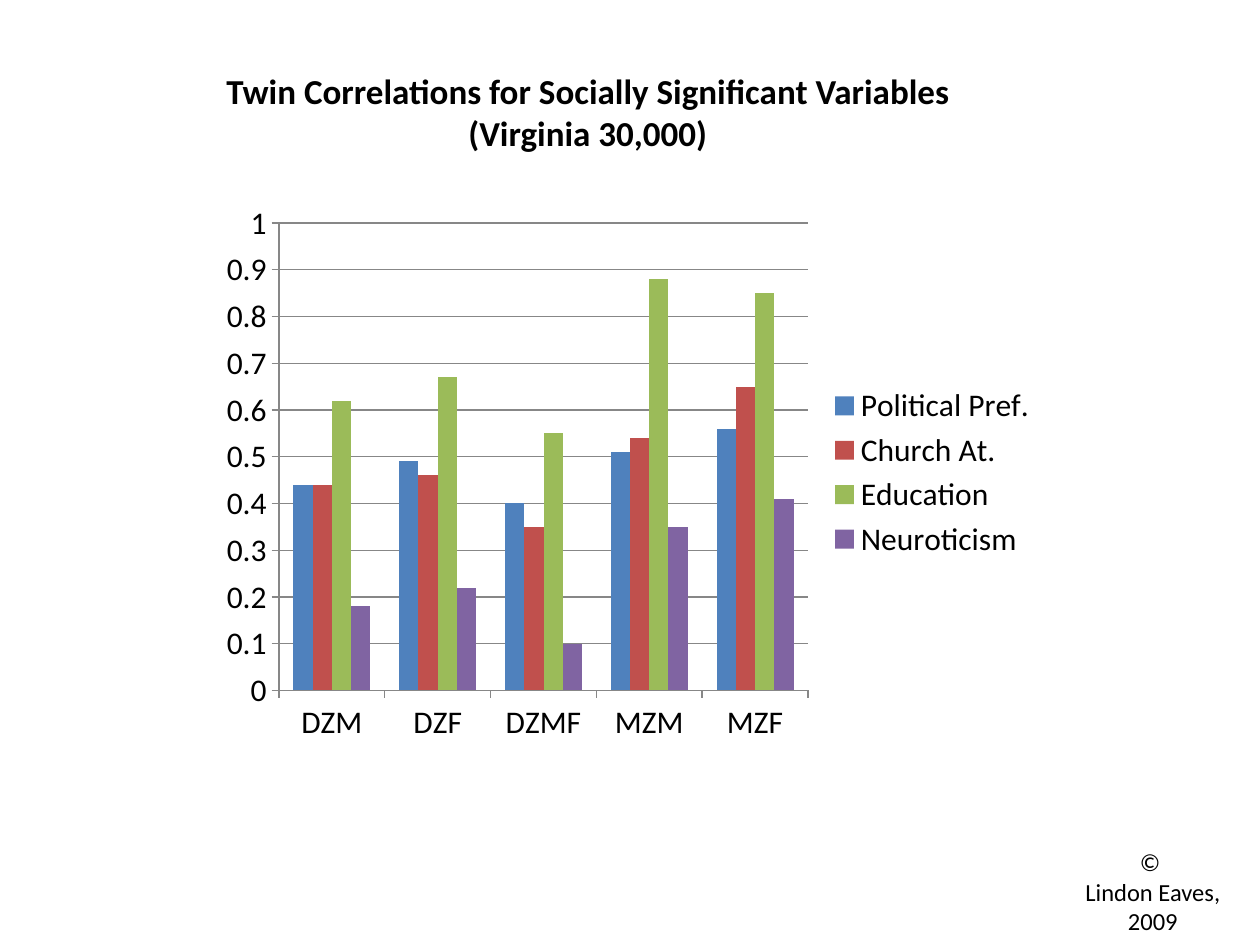
from dataclasses import dataclass
from typing import NamedTuple

from pptx import Presentation
from pptx.chart.data import CategoryChartData
from pptx.dml.color import RGBColor
from pptx.enum.chart import XL_CHART_TYPE, XL_LEGEND_POSITION, XL_TICK_MARK
from pptx.enum.text import MSO_AUTO_SIZE, PP_ALIGN
from pptx.util import Inches, Pt


@dataclass(frozen=True)
class Theme:
    """Colours, font and type sizes of the slide."""

    font: str = "Calibri"
    ink: str = "000000"
    rule: str = "878787"
    title_size: int = 20
    chart_size: int = 18
    credit_size: int = 14
    rule_width: float = 0.75
    series: tuple = ("4F81BD", "C0504D", "9BBB59", "8064A2")


class Box(NamedTuple):
    """A region given in inches."""

    left: float
    top: float
    width: float
    height: float

    def lengths(self):
        """Return the four lengths in slide units."""
        return tuple(Inches(value) for value in self)


THEME = Theme()
SLIDE_WIDTH, SLIDE_HEIGHT = 10, 7.5
TWIN_GROUPS = ("DZM", "DZF", "DZMF", "MZM", "MZF")
CORRELATIONS = {
    "Political Pref.": (0.44, 0.49, 0.40, 0.51, 0.56),
    "Church At.": (0.44, 0.46, 0.35, 0.54, 0.65),
    "Education": (0.62, 0.67, 0.55, 0.88, 0.85),
    "Neuroticism": (0.18, 0.22, 0.10, 0.35, 0.41),
}


def share(left, top, width, height):
    """Turn shares of the slide into a box."""
    return Box(left * SLIDE_WIDTH, top * SLIDE_HEIGHT,
               width * SLIDE_WIDTH, height * SLIDE_HEIGHT)


def style_font(font, size, bold=False):
    """Apply the theme's font and ink."""
    font.name = THEME.font
    font.size = Pt(size)
    font.bold = bold
    font.color.rgb = RGBColor.from_string(THEME.ink)


def style_line(line):
    """Apply the theme's thin rule to a chart line."""
    line.color.rgb = RGBColor.from_string(THEME.rule)
    line.width = Pt(THEME.rule_width)


def add_centred_lines(slide, box, lines, size, bold=False):
    """Place centred lines of text, one paragraph each."""
    frame = slide.shapes.add_textbox(*box.lengths()).text_frame
    frame.word_wrap = False
    frame.auto_size = MSO_AUTO_SIZE.SHAPE_TO_FIT_TEXT
    for index, line in enumerate(lines):
        paragraph = frame.add_paragraph() if index else frame.paragraphs[0]
        paragraph.alignment = PP_ALIGN.CENTER
        run = paragraph.add_run()
        run.text = line
        style_font(run.font, size, bold)


def style_axes(chart):
    """Set ticks, scale and rules of both axes."""
    for axis in (chart.category_axis, chart.value_axis):
        axis.major_tick_mark = XL_TICK_MARK.OUTSIDE
        axis.minor_tick_mark = XL_TICK_MARK.NONE
        style_line(axis.format.line)
    value_axis = chart.value_axis
    value_axis.minimum_scale, value_axis.maximum_scale = 0, 1
    value_axis.major_unit = 0.1
    value_axis.has_major_gridlines = True
    style_line(value_axis.major_gridlines.format.line)


def add_correlation_chart(slide, box):
    """Place the clustered columns with their legend."""
    data = CategoryChartData()
    data.categories = TWIN_GROUPS
    for name, values in CORRELATIONS.items():
        data.add_series(name, values)
    chart = slide.shapes.add_chart(
        XL_CHART_TYPE.COLUMN_CLUSTERED, *box.lengths(), data).chart
    chart.has_title = False
    style_font(chart.font, THEME.chart_size)
    chart.has_legend = True
    chart.legend.position = XL_LEGEND_POSITION.RIGHT
    chart.legend.include_in_layout = False
    style_axes(chart)
    plot = chart.plots[0]
    plot.gap_width = 150
    plot.overlap = 0
    plot.vary_by_categories = False
    for series, color in zip(plot.series, THEME.series):
        series.format.fill.solid()
        series.format.fill.fore_color.rgb = RGBColor.from_string(color)


def main():
    """Build and save the slide."""
    presentation = Presentation()
    presentation.slide_width = Inches(SLIDE_WIDTH)
    presentation.slide_height = Inches(SLIDE_HEIGHT)
    slide = presentation.slides.add_slide(presentation.slide_layouts[6])
    add_correlation_chart(slide, share(1 / 6, 0.204, 2 / 3, 0.592))
    add_centred_lines(
        slide, share(1 / 6, 1 / 15, 0.6, 0.1),
        ("Twin Correlations for Socially Significant Variables",
         "(Virginia 30,000)"),
        THEME.title_size, bold=True)
    add_centred_lines(
        slide, share(0.85, 0.89, 0.13, 0.11),
        ("© ", "Lindon Eaves, ", "2009"), THEME.credit_size)
    presentation.save("out.pptx")


if __name__ == "__main__":
    main()
